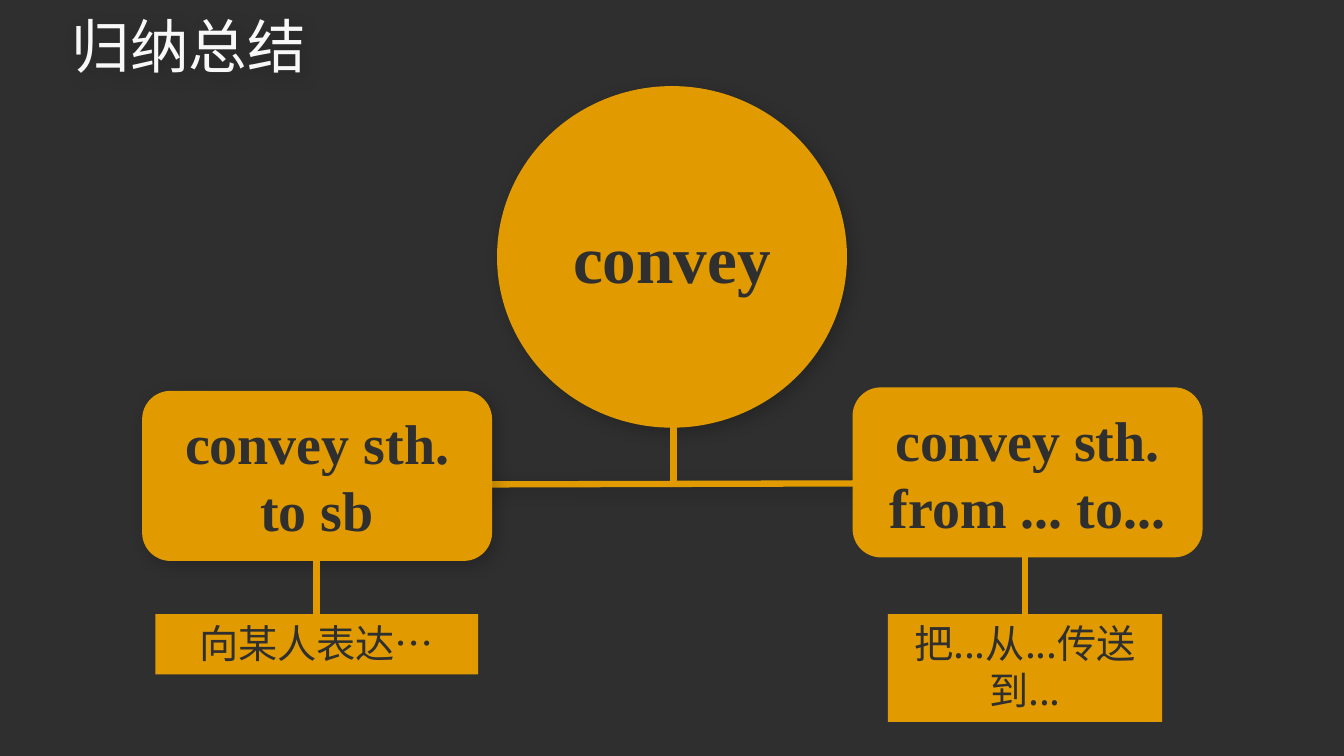
from lxml import etree
from pptx import Presentation
from pptx import util as u
from pptx.dml.color import RGBColor
from pptx.enum import shapes, text
from pptx.oxml import ns

Pt = u.Pt
GOLD, DARK, WHITE = "E19B01", "2F2F2F", "F8F8F8"
SERIF, SANS = "Times New Roman", "Noto Sans CJK SC"


def colour(target, value):
    target.rgb = RGBColor.from_string(value)


def add_effects(shape, shadow):
    """Give a shape a soft drop shadow, or an empty effect list."""
    effects = etree.SubElement(shape._element.spPr, ns.qn("a:effectLst"))
    if shadow:
        outer = etree.SubElement(effects, ns.qn("a:outerShdw"), blurRad=str(Pt(12)),
                                 dist=str(Pt(4)), dir=str(45 * 60000), algn="tl")
        black = etree.SubElement(outer, ns.qn("a:srgbClr"), val="000000")
        etree.SubElement(black, ns.qn("a:alpha"), val="22000")


def write(box, words, size, font, value, align, bold=False):
    frame = box.text_frame
    frame.word_wrap = True
    frame.text = words
    para = frame.paragraphs[0]
    para.alignment = align
    para.font.size, para.font.bold = Pt(size), bold
    para.font.name = font
    etree.SubElement(para.font._rPr, ns.qn("a:ea"), typeface=font)
    colour(para.font.color, value)
    return frame


def add_title(page, words):
    title = page.shapes.title
    title.left, title.top, title.width, title.height = Pt(44), Pt(8), Pt(873), Pt(55)
    frame = write(title, words, 41.8, SANS, WHITE, text.PP_ALIGN.LEFT)
    frame.auto_size = text.MSO_AUTO_SIZE.NONE
    frame.vertical_anchor = text.MSO_ANCHOR.MIDDLE
    frame.paragraphs[0].line_spacing = 0.9
    add_effects(title, True)


def add_node(page, kind, place, words, size, font=SERIF, shadow=False):
    node = page.shapes.add_shape(kind, *map(Pt, place))
    node.fill.solid()
    colour(node.fill.fore_color, GOLD)
    node.line.fill.background()
    add_effects(node, shadow)
    frame = write(node, words, size, font, DARK, text.PP_ALIGN.CENTER, font == SERIF)
    frame.vertical_anchor = text.MSO_ANCHOR.MIDDLE
    return frame


def add_line(page, ends, shadow=False):
    line = page.shapes.add_connector(shapes.MSO_CONNECTOR.STRAIGHT, *map(Pt, ends))
    colour(line.line.color, GOLD)
    line.line.width = Pt(4.5)
    add_effects(line, shadow)


def add_meaning(page, place, words):
    frame = add_node(page, shapes.MSO_SHAPE.RECTANGLE, place, words, 28, SANS)
    frame.vertical_anchor = text.MSO_ANCHOR.TOP
    frame.auto_size = text.MSO_AUTO_SIZE.SHAPE_TO_FIT_TEXT


def main():
    deck = Presentation()
    deck.slide_width, deck.slide_height = Pt(960), Pt(540)
    page = deck.slides.add_slide(deck.slide_layouts[5])
    page.background.fill.solid()
    colour(page.background.fill.fore_color, DARK)
    add_title(page, "归纳总结")

    # Key word
    add_node(page, shapes.MSO_SHAPE.OVAL, (355, 61.5, 250, 244), "convey", 48, shadow=True)

    # Branches from the key word
    add_line(page, (247, 346.3, 754.5, 344.9), shadow=True)
    add_line(page, (481, 343.5, 481, 301))

    # Phrases
    phrases = [(101.5, 279.2, "convey sth. to sb", True),
               (609, 276.7, "convey sth. from ... to...", False)]
    for left, top, words, shadow in phrases:
        add_node(page, shapes.MSO_SHAPE.ROUNDED_RECTANGLE, (left, top, 250, 121.5),
                 words, 40, shadow=shadow)

    # Stems and meanings
    for x in (226.2, 732.2):
        add_line(page, (x, 440, x, 398))
    add_meaning(page, (111, 438.7, 230.5, 43), "向某人表达…")
    add_meaning(page, (634.2, 438.7, 196, 77), "把...从...传送到...")

    deck.save("out.pptx")


if __name__ == "__main__":
    main()
